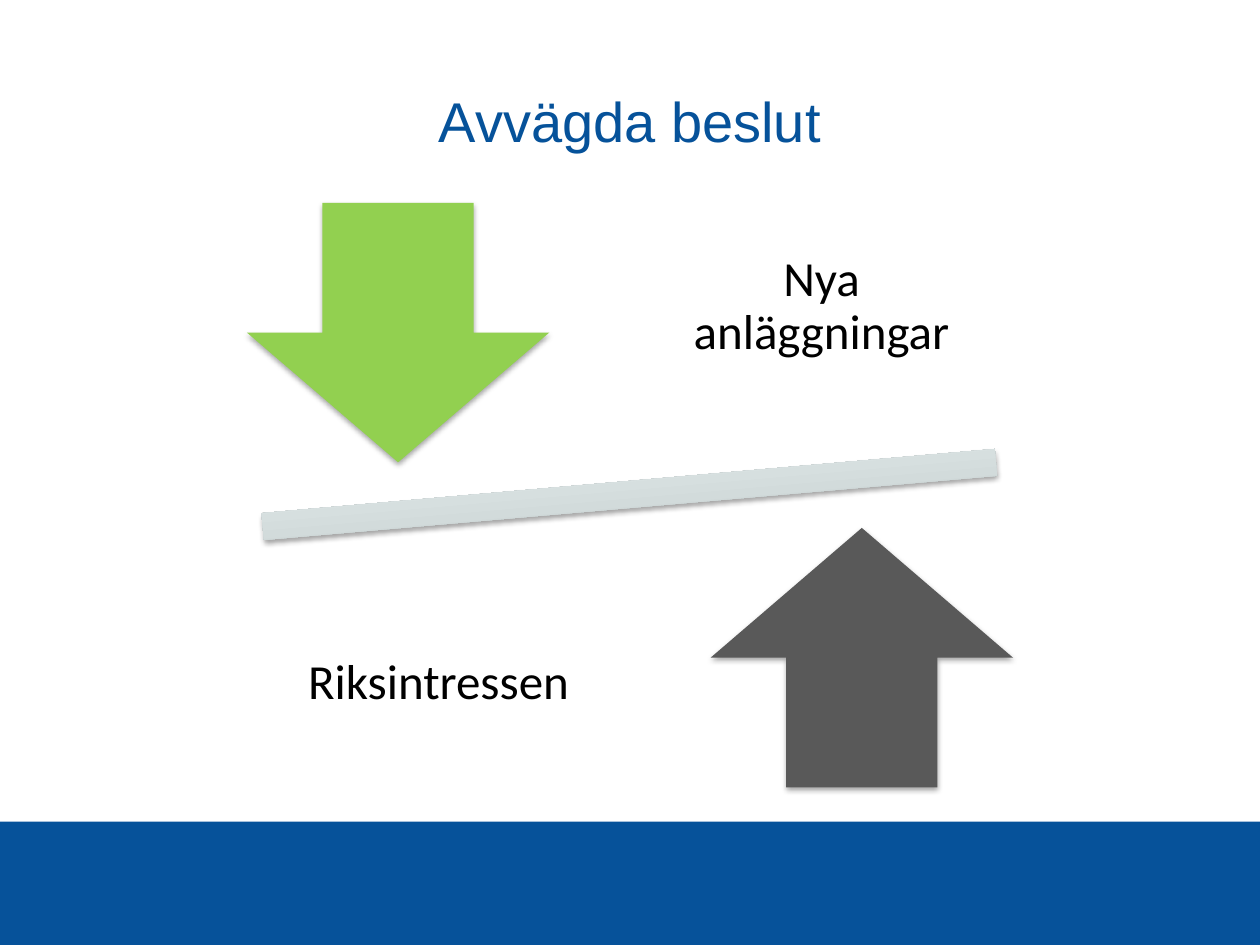
"""Build the slide "Avvägda beslut": two opposing arrows around a tilted beam."""
import lxml.etree
import pptx
import pptx.dml.color
import pptx.enum.shapes
import pptx.enum.text
import pptx.oxml.ns
import pptx.util

Inches = pptx.util.Inches
Pt = pptx.util.Pt
RGB = pptx.dml.color.RGBColor.from_string
KIND = pptx.enum.shapes.MSO_SHAPE
ALIGN = pptx.enum.text.PP_ALIGN
ANCHOR = pptx.enum.text.MSO_ANCHOR

THEME = {
    "blue": "06529A",
    "green": "92D050",
    "grey": "595959",
    "black": "000000",
    "beam": ((0, "B3BABA"), (0.8, "E8F1F2")),
    "title": {"name": "Arial", "size": Pt(32)},
    "label": {"name": "Calibri", "size": Pt(28)},
    "shadow": {"blurRad": Pt(3.1), "dist": Pt(1.8), "dir": 90 * 60000, "rotWithShape": 0},
    "shadow_alpha": 35000,
}

FOOTER = (0, 6.52, 10, 0.98)
BEAM = (1.02, 3.47, 7.95, 0.91)
BEAM_TILT = -5
ARROW_SIZE = (2.4, 2.06)
LABEL_SIZE = (2.56, 2.17)
ARROWS = [
    (KIND.DOWN_ARROW, (1.96, 1.61), "green"),
    (KIND.UP_ARROW, (5.64, 4.19), "grey"),
]
TEXTS = [
    ("Avvägda beslut", (1, 0.55, 8, 0.8), "title", "blue", 0.1, 1.0),
    ("Nya anläggningar", (5.24, 1.35, *LABEL_SIZE), "label", "black", 0.22, 0.9),
    ("Riksintressen", (2.2, 4.34, *LABEL_SIZE), "label", "black", 0.22, 0.9),
]


def apply(target, values):
    for key, value in values.items():
        setattr(target, key, value)


def add_figure(slide, kind, box, colour=None):
    figure = slide.shapes.add_shape(kind, *map(Inches, box))
    figure.shadow.inherit = False
    figure.line.fill.background()
    if colour:
        figure.fill.solid()
        figure.fill.fore_color.rgb = RGB(THEME[colour])
    return figure


def cast_shadow(figure):
    qn = pptx.oxml.ns.qn
    effects = figure.element.spPr.find(qn("a:effectLst"))
    outer = lxml.etree.SubElement(effects, qn("a:outerShdw"))
    for key, value in THEME["shadow"].items():
        outer.set(key, str(int(value)))
    tint = lxml.etree.SubElement(outer, qn("a:srgbClr"), val=THEME["black"])
    lxml.etree.SubElement(tint, qn("a:alpha"), val=str(THEME["shadow_alpha"]))


def add_beam(slide):
    beam = add_figure(slide, KIND.MATH_MINUS, BEAM)
    beam.rotation = BEAM_TILT
    beam.fill.gradient()
    beam.fill.gradient_angle = 90
    for stop, (position, colour) in zip(beam.fill.gradient_stops, THEME["beam"]):
        stop.position = position
        stop.color.rgb = RGB(colour)
    cast_shadow(beam)


def add_text(slide, words, box, style, colour, inset, spacing):
    frame = slide.shapes.add_textbox(*map(Inches, box)).text_frame
    apply(frame, {"word_wrap": True, "vertical_anchor": ANCHOR.MIDDLE})
    apply(frame, {f"margin_{side}": Inches(inset) for side in ("left", "top", "right", "bottom")})
    paragraph = frame.paragraphs[0]
    apply(paragraph, {"text": words, "alignment": ALIGN.CENTER, "line_spacing": spacing})
    font = paragraph.runs[0].font
    apply(font, THEME[style])
    font.color.rgb = RGB(THEME[colour])


def main():
    deck = pptx.Presentation()
    apply(deck, {"slide_width": Inches(10), "slide_height": Inches(7.5)})
    slide = deck.slides.add_slide(deck.slide_layouts[6])
    add_figure(slide, KIND.RECTANGLE, FOOTER, "blue")
    add_beam(slide)
    for kind, corner, colour in ARROWS:
        cast_shadow(add_figure(slide, kind, corner + ARROW_SIZE, colour))
    for text in TEXTS:
        add_text(slide, *text)
    deck.save("out.pptx")


if __name__ == "__main__":
    main()
